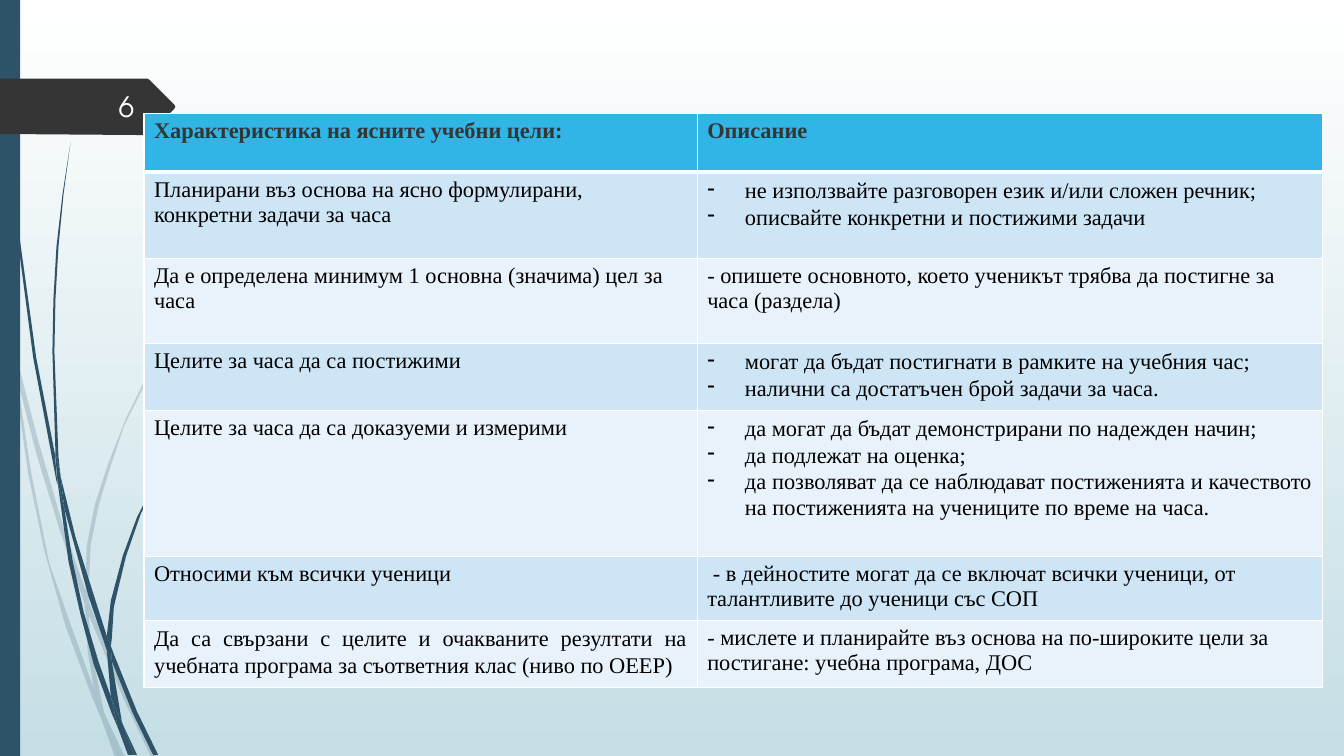
from enum import Enum

from lxml.etree import SubElement
from pptx import Presentation
from pptx.dml.color import RGBColor
from pptx.enum.shapes import MSO_SHAPE
from pptx.enum.text import MSO_ANCHOR, PP_ALIGN
from pptx.oxml import parse_xml
from pptx.oxml.ns import nsdecls, qn
from pptx.util import Cm, Pt

COLORS = {
    "sky": "FFFFFF", "mist": "C5DEE5", "stem": "2E5369", "marker": "353535",
    "number": "FEFFFF", "header": "31B4E6", "odd": "CEE5F5", "even": "E8F2FA",
    "grid": "FFFFFF", "heading": "353535", "text": "000000",
}
HUNDREDTH_INCH = Cm(0.0254)


class Kind(Enum):
    """Paragraph layouts used in the table cells."""
    PLAIN = 1
    DASHED = 2
    JUSTIFIED = 3


PALE_GRASS = [
    [11, 350, 10, 331, 9, 322, 0, 282, 0, 299, 10, 344],
    [58, 522, 84, 599, 85, 586, 62, 520, 37, 434, 14, 345, 17, 376, 36, 450],
    [92, 607, 88, 596, 88, 610, 123, 694, 150, 751, 155, 751, 127, 692],
    [119, 751, 124, 751, 105, 711],
    [93, 683, 70, 619, 49, 559, 31, 469, 17, 376, 11, 350, 28, 470, 44, 546,
     65, 621, 92, 693, 101, 714, 99, 707],
    [84, 599, 87, 646, 93, 683, 96, 692, 105, 711, 103, 706, 91, 646, 88, 610,
     88, 608],
    [88, 584, 90, 541, 98, 501, 110, 462, 123, 423, 160, 349, 180, 312, 229, 245,
     268, 198, 290, 175, 312, 154, 312, 153, 289, 175, 268, 197, 228, 244,
     180, 311, 158, 348, 125, 415, 107, 461, 94, 501, 86, 542, 85, 584, 85, 586,
     88, 596],
    [101, 714, 114, 751, 119, 751],
    [88, 608, 88, 610, 88, 596, 85, 586, 84, 599],
    [96, 692, 93, 683, 99, 707, 101, 714, 119, 751, 105, 711],
]
DARK_GRASS = [
    [7, 110, 17, 233, 33, 355, 56, 477, 57, 481, 55, 457, 55, 453, 36, 355,
     19, 232, 8, 109, 5, 48, 4, 0, 3, 0, 4, 48],
    [88, 592, 106, 645, 106, 633, 106, 631, 93, 590, 75, 533, 60, 472, 64, 505],
    [113, 649, 110, 641, 111, 656, 132, 708, 152, 749, 157, 749, 136, 706],
    [110, 691, 98, 657, 83, 607, 72, 556, 64, 505, 57, 477, 68, 557, 80, 610,
     93, 659, 111, 708, 117, 722, 116, 717],
    [60, 472, 58, 453, 54, 349, 55, 297, 58, 245, 63, 193, 70, 141, 62, 193,
     56, 245, 53, 297, 52, 349, 55, 449],
    [133, 749, 136, 749, 122, 719],
    [57, 477, 64, 505, 60, 472, 55, 449, 55, 453],
    [111, 633, 113, 602, 125, 552, 140, 509, 158, 476, 205, 406, 231, 374,
     245, 359, 261, 344, 260, 344, 245, 358, 231, 373, 204, 405, 156, 474,
     136, 513, 122, 551, 110, 596, 106, 631, 110, 641],
    [117, 722, 127, 749, 131, 749],
    [106, 645, 110, 691, 116, 706, 122, 719, 121, 716, 111, 656, 109, 651],
    [106, 645, 109, 651, 111, 656, 110, 641, 106, 631, 106, 633],
    [116, 706, 110, 691, 116, 717, 117, 722, 130, 749, 133, 749, 122, 719],
]
PAGE_MARKER = [173, 108, 148, 133, 146, 134, 136, 134, 0, 133, 0, 78, 146, 78,
               148, 79, 173, 104, 174, 106]

GOALS = [
    [(Kind.PLAIN, "Характеристика на ясните учебни цели:"), (Kind.PLAIN, "Описание")],
    [(Kind.PLAIN, "Планирани въз основа на ясно формулирани, конкретни задачи за часа"),
     (Kind.DASHED, "не използвайте разговорен език и/или сложен речник;",
      "описвайте конкретни и постижими задачи")],
    [(Kind.PLAIN, "Да е определена минимум 1 основна (значима) цел за часа"),
     (Kind.PLAIN, "- опишете основното, което ученикът трябва да постигне за часа (раздела)")],
    [(Kind.PLAIN, "Целите за часа да са постижими"),
     (Kind.DASHED, "могат да бъдат постигнати в рамките на учебния час;",
      "налични са достатъчен брой задачи за часа.")],
    [(Kind.PLAIN, "Целите за часа да са доказуеми и измерими"),
     (Kind.DASHED, "да могат да бъдат демонстрирани по надежден начин;",
      "да подлежат на оценка;",
      "да позволяват да се наблюдават постиженията и качеството на "
      "постиженията на учениците по време на часа.")],
    [(Kind.PLAIN, "Относими към всички ученици"),
     (Kind.PLAIN, " - в дейностите могат да се включат всички ученици, "
      "от талантливите до ученици със СОП")],
    [(Kind.JUSTIFIED, "Да са свързани с целите и очакваните резултати на учебната "
      "програма за съответния клас (ниво по ОЕЕР)"),
     (Kind.PLAIN, "- мислете и планирайте въз основа на по-широките цели за "
      "постигане: учебна програма, ДОС")],
]


class GoalsSlide:
    """Holds the style and the current slide, and draws its elements."""

    def __init__(self, slide, colors):
        self.slide = slide
        self.colors = {name: RGBColor.from_string(code) for name, code in colors.items()}

    def background(self, top, bottom):
        fill = self.slide.background.fill
        fill.gradient()
        fill.gradient_angle = 270
        for stop, color, position in zip(fill.gradient_stops, (top, bottom), (0, 1)):
            stop.color.rgb = self.colors[color]
            stop.position = position

    def paint(self, shape, color):
        shape.shadow.inherit = False
        shape.fill.solid()
        shape.fill.fore_color.rgb = self.colors[color]
        shape.line.fill.background()

    def bar(self, left, top, width, height, color):
        bar = self.slide.shapes.add_shape(
            MSO_SHAPE.RECTANGLE, Cm(left), Cm(top), Cm(width), Cm(height))
        self.paint(bar, color)

    def outline(self, shapes, numbers, color, opacity=100):
        points = list(zip(numbers[::2], numbers[1::2]))
        builder = shapes.build_freeform(*points[0], scale=HUNDREDTH_INCH)
        builder.add_line_segments(points[1:], close=True)
        outline = builder.convert_to_shape()
        self.paint(outline, color)
        if opacity < 100:
            tint = outline.fill._xPr.find(qn("a:solidFill"))[0]
            SubElement(tint, qn("a:alpha")).set("val", str(opacity * 1000))

    def grass(self, blades, opacity=100):
        tuft = self.slide.shapes.add_group_shape()
        for blade in blades:
            self.outline(tuft.shapes, blade, "stem", opacity)

    def run(self, paragraph, text, font, size, color, bold=False):
        run = paragraph.add_run()
        run.text = text
        run.font.name, run.font.size, run.font.bold = font, Pt(size), bold
        run.font.color.rgb = self.colors[color]

    def page_number(self, text, left, top, width, height):
        frame = self.slide.shapes.add_textbox(
            Cm(left), Cm(top), Cm(width), Cm(height)).text_frame
        frame.word_wrap = True
        frame.vertical_anchor = MSO_ANCHOR.MIDDLE
        frame.paragraphs[0].alignment = PP_ALIGN.RIGHT
        self.run(frame.paragraphs[0], text, "TeX Gyre Adventor", 20, color="number")

    def borders(self, cell, top, bottom):
        properties = cell._tc.get_or_add_tcPr()
        for index, (side, points) in enumerate(
                (("L", 1), ("R", 1), ("T", top), ("B", bottom))):
            properties.insert(index, parse_xml(
                f'<a:ln{side} {nsdecls("a")} w="{Pt(points)}"><a:solidFill>'
                f'<a:srgbClr val="{self.colors["grid"]}"/></a:solidFill></a:ln{side}>'))

    def cell_text(self, frame, kind, texts, color, bold):
        for index, text in enumerate(texts):
            paragraph = frame.add_paragraph() if index else frame.paragraphs[0]
            if kind is not Kind.PLAIN:
                paragraph.alignment = PP_ALIGN.JUSTIFY
                paragraph.line_spacing = 1.06
            if kind is Kind.DASHED:
                properties = paragraph._p.get_or_add_pPr()
                properties.set("marL", str(Cm(0.95)))
                properties.set("indent", str(-Cm(0.95)))
                SubElement(properties, qn("a:buChar")).set("char", "-")
            self.run(paragraph, text, "Times New Roman", 16, color, bold)

    def table(self, rows, left, top, widths, heights):
        table = self.slide.shapes.add_table(
            len(rows), len(widths), Cm(left), Cm(top),
            Cm(sum(widths)), Cm(sum(heights))).table
        for column, width in zip(table.columns, widths):
            column.width = Cm(width)
        for number, (row, height, goal) in enumerate(zip(table.rows, heights, rows)):
            row.height = Cm(height)
            header = number == 0
            band = "header" if header else ("even", "odd")[number % 2]
            for cell, (kind, *texts) in zip(row.cells, goal):
                cell.fill.solid()
                cell.fill.fore_color.rgb = self.colors[band]
                self.borders(cell, 3 if number == 1 else 1, 3 if header else 1)
                self.cell_text(cell.text_frame, kind, texts,
                               "heading" if header else "text", header)


def main():
    """Build the slide and save it."""
    deck = Presentation()
    deck.slide_width, deck.slide_height = Cm(33.87), Cm(19.05)
    page = GoalsSlide(deck.slides.add_slide(deck.slide_layouts[6]), COLORS)
    page.background("sky", "mist")
    page.grass(PALE_GRASS, opacity=20)
    page.grass(DARK_GRASS)
    page.bar(0, 0, 0.51, 19.05, "stem")
    page.outline(page.slide.shapes, PAGE_MARKER, "marker")
    page.page_number("6", 1.47, 2.18, 2.16, 1.02)
    page.table(GOALS, 3.63, 2.87, [13.94, 15.75],
               [1.47, 2.18, 2.13, 1.57, 3.68, 1.5, 1.57])
    deck.save("out.pptx")


if __name__ == "__main__":
    main()
